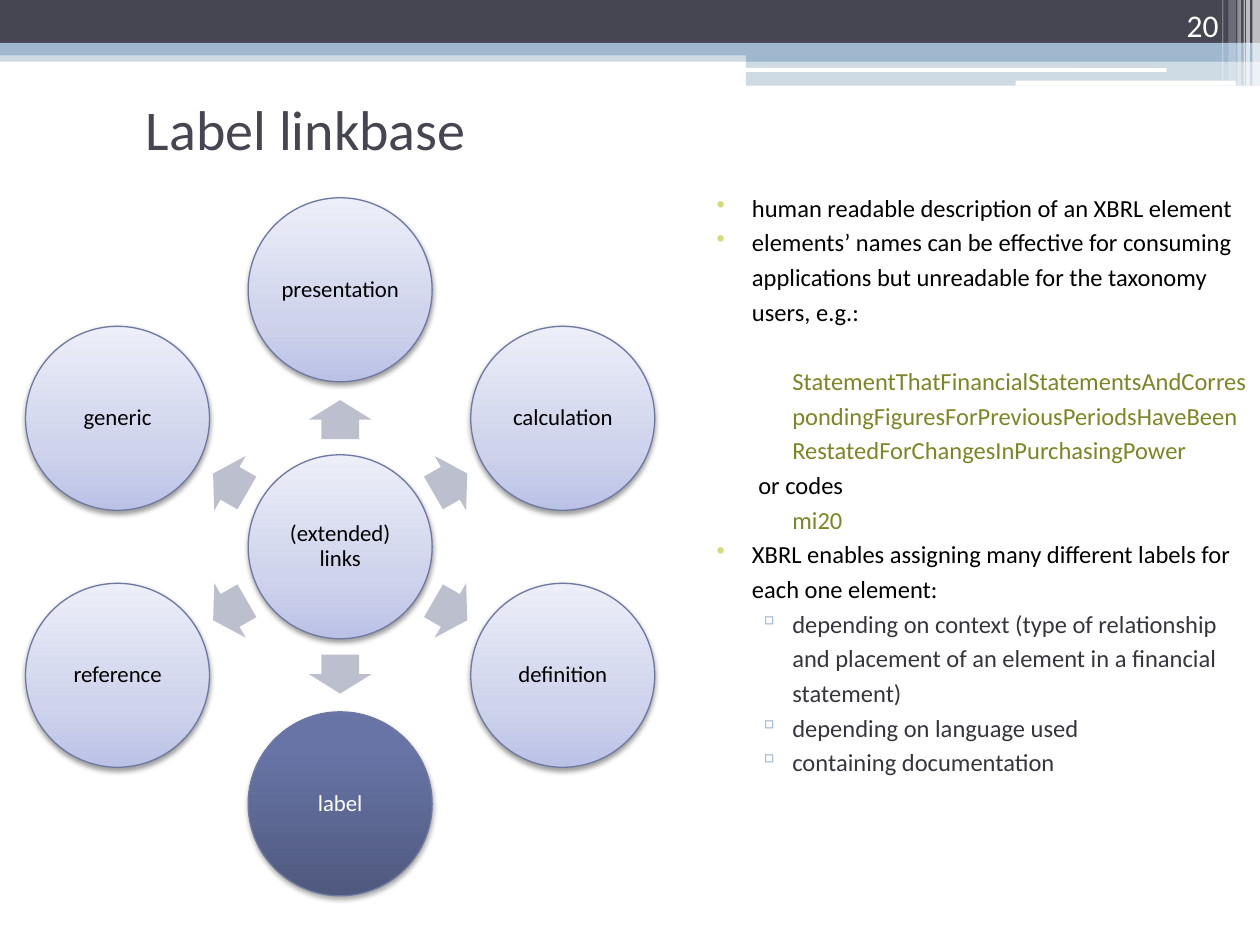
import math

import lxml.etree
import pptx
import pptx.dml.color
import pptx.enum.shapes
import pptx.enum.text
import pptx.oxml.ns
import pptx.util

Inches, Pt = pptx.util.Inches, pptx.util.Pt
RGBColor = pptx.dml.color.RGBColor
MSO_SHAPE = pptx.enum.shapes.MSO_SHAPE
PP_ALIGN = pptx.enum.text.PP_ALIGN
MSO_ANCHOR = pptx.enum.text.MSO_ANCHOR
qn = pptx.oxml.ns.qn

FONT = "Calibri"
BLACK = RGBColor(0x00, 0x00, 0x00)
WHITE = RGBColor(0xFF, 0xFF, 0xFF)
SLATE = RGBColor(0x46, 0x46, 0x53)
SKY = RGBColor(0x9F, 0xB8, 0xCD)
ARROW = RGBColor(0xBC, 0xBF, 0xCE)
OUTLINE = RGBColor(0x6E, 0x79, 0xA1)
LIME = RGBColor(0xD2, 0xDA, 0x7A)
OLIVE = RGBColor(0x7D, 0x85, 0x25)
CHARCOAL = RGBColor(0x35, 0x35, 0x3E)
PALE_STOPS = [(0, RGBColor(0xBB, 0xC2, 0xE6)), (35, RGBColor(0xCF, 0xD4, 0xEC)),
              (100, RGBColor(0xEC, 0xEE, 0xF8))]
DARK_STOPS = [(0, RGBColor(0x50, 0x59, 0x7F)), (80, RGBColor(0x67, 0x74, 0xA5)),
              (100, RGBColor(0x67, 0x74, 0xA7))]

BANDS = [
    (0, 0.4, 10, 0.09, SKY, 50),
    (0, 0, 10, 0.34, SLATE, 100),
    (0, 0.34, 10, 0.1, SKY, 100),
    (5.92, 0.39, 4.08, 0.1, SKY, 100),
    (5.92, 0.48, 4.08, 0.2, SKY, 50),
]
PILLS = [(5.91, 0.54, 3.35, 0.03), (8.06, 0.64, 1.75, 0.04)]
STRIPES = [
    (9.94, 0.06, 0.68, 65), (9.89, 0.03, 0.68, 65), (9.87, 0.01, 0.68, 60),
    (9.82, 0.03, 0.68, 40), (9.75, 0.06, 0.64, 20), (9.7, 0.01, 0.64, 30),
]

CENTER_X, CENTER_Y = 2.7, 4.34
RING_RADIUS, ARROW_RADIUS = 2.04, 1.01
DIAMETER = 1.46
LINKBASES = ["presentation", "calculation", "definition", "label", "reference", "generic"]

TOP, SUB = (0.4, -0.28), (0.72, -0.27)
NOTES = [
    (TOP, "•", BLACK, "human readable description of an XBRL element"),
    (TOP, "•", BLACK, "elements’ names can be effective for consuming applications "
                      "but unreadable for the taxonomy users, e.g.:"),
    (SUB, None, OLIVE, "\tStatementThatFinancialStatementsAndCorrespondingFiguresForPrevious"
                       "PeriodsHaveBeenRestatedForChangesInPurchasingPower"),
    (SUB, None, BLACK, "or codes"),
    (SUB, None, OLIVE, "\tmi20"),
    (TOP, "•", BLACK, "XBRL enables assigning many different labels for each one element:"),
    (SUB, "▫", CHARCOAL, "depending on context (type of relationship and placement of "
                         "an element in a financial statement)"),
    (SUB, "▫", CHARCOAL, "depending on language used"),
    (SUB, "▫", CHARCOAL, "containing documentation"),
]
BULLET_COLORS = {"•": LIME, "▫": SKY}


def add_color(parent, color, alpha=100):
    """Append an RGB colour with an opacity in percent to an XML element."""
    clr = lxml.etree.SubElement(parent, qn("a:srgbClr"), val=str(color))
    if alpha < 100:
        lxml.etree.SubElement(clr, qn("a:alpha"), val=str(alpha * 1000))


def add_solid(s, kind, x, y, w, h, color, alpha=100):
    """Add a borderless preset shape with a plain fill."""
    sp = s.shapes.add_shape(kind, Inches(x), Inches(y), Inches(w), Inches(h))
    sp.shadow.inherit = False
    sp.line.fill.background()
    sp.fill.solid()
    sp.fill.fore_color.rgb = color
    if alpha < 100:
        fill = sp.element.spPr.find(qn("a:solidFill"))
        fill.clear()
        add_color(fill, color, alpha)
    return sp


def write_paragraph(p, text, size, color, align=PP_ALIGN.LEFT):
    """Set a paragraph's text and format all its runs."""
    p.text = text
    p.alignment = align
    for r in p.runs:
        r.font.name = FONT
        r.font.size = Pt(size)
        r.font.color.rgb = color


def add_text(s, x, y, w, h, anchor):
    """Add a wrapping text box and return its text frame."""
    tf = s.shapes.add_textbox(Inches(x), Inches(y), Inches(w), Inches(h)).text_frame
    tf.word_wrap = True
    tf.vertical_anchor = anchor
    return tf


def add_circle(s, x, y, text, stops, color, shadow_alpha, distance):
    """Add a shaded, labelled circle centred on a point."""
    sp = s.shapes.add_shape(MSO_SHAPE.OVAL, Inches(x - DIAMETER / 2), Inches(y - DIAMETER / 2),
                            Inches(DIAMETER), Inches(DIAMETER))
    sp.line.color.rgb = OUTLINE
    sp.line.width = Pt(0.75)
    sp.fill.gradient()
    sp.fill.gradient_angle = 90
    gradient = sp.element.spPr.find(qn("a:gradFill")).find(qn("a:gsLst"))
    gradient.clear()
    for pos, stop in stops:
        add_color(lxml.etree.SubElement(gradient, qn("a:gs"), pos=str(pos * 1000)), stop)
    sp.shadow.inherit = False
    shadow = lxml.etree.SubElement(
        sp.element.spPr.find(qn("a:effectLst")), qn("a:outerShdw"), blurRad=str(Pt(3.1)),
        dist=str(Pt(distance)), dir="5400000", rotWithShape="0")
    add_color(shadow, BLACK, shadow_alpha)
    tf = sp.text_frame
    tf.word_wrap = True
    tf.vertical_anchor = MSO_ANCHOR.MIDDLE
    tf.margin_left = tf.margin_right = tf.margin_top = tf.margin_bottom = Inches(0.02)
    p = tf.paragraphs[0]
    write_paragraph(p, text, 13, color, PP_ALIGN.CENTER)
    p.line_spacing = 0.9


def add_arrow(s, x, y, rotation):
    """Add a block arrow centred on a point."""
    w, h = 0.31, 0.5
    sp = add_solid(s, MSO_SHAPE.RIGHT_ARROW, x - w / 2, y - h / 2, w, h, ARROW)
    sp.adjustments[0] = 0.6
    sp.adjustments[1] = 0.5
    sp.rotation = rotation


def add_header(s):
    """Add the bands, pills and stripes along the top edge."""
    for x, y, w, h, color, alpha in BANDS:
        add_solid(s, MSO_SHAPE.RECTANGLE, x, y, w, h, color, alpha)
    for pill in PILLS:
        add_solid(s, MSO_SHAPE.ROUNDED_RECTANGLE, *pill, WHITE)
    for x, w, h, alpha in STRIPES:
        add_solid(s, MSO_SHAPE.RECTANGLE, x, 0, w, h, WHITE, alpha)


def add_wheel(s):
    """Add the hub circle with its ring of linkbases."""
    pale = (PALE_STOPS, BLACK, 38, 1.6)
    dark = (DARK_STOPS, WHITE, 35, 1.8)
    add_circle(s, CENTER_X, CENTER_Y, "(extended)\nlinks", *pale)
    for i, name in enumerate(LINKBASES):
        angle = 360 / len(LINKBASES) * i - 90
        dx, dy = math.cos(math.radians(angle)), math.sin(math.radians(angle))
        add_arrow(s, CENTER_X + ARROW_RADIUS * dx, CENTER_Y + ARROW_RADIUS * dy, angle % 360)
        add_circle(s, CENTER_X + RING_RADIUS * dx, CENTER_Y + RING_RADIUS * dy, name,
                   *(dark if name == "label" else pale))


def add_notes(s):
    """Add the bulleted explanation on the right."""
    tf = add_text(s, 5.47, 1.48, 4.53, 5.63, MSO_ANCHOR.TOP)
    for i, ((margin, indent), bullet, color, text) in enumerate(NOTES):
        p = tf.add_paragraph() if i else tf.paragraphs[0]
        write_paragraph(p, text, 14, color)
        p.level = 1 if margin == SUB[0] else 0
        if i:
            p.line_spacing = 1.18
        else:
            p.space_before = Pt(3)
        pPr = p.runs[0].font._element.getparent().getparent().find(qn("a:pPr"))
        pPr.set("marL", str(Inches(margin)))
        pPr.set("indent", str(Inches(indent)))
        if bullet:
            add_color(lxml.etree.SubElement(pPr, qn("a:buClr")), BULLET_COLORS[bullet])
            lxml.etree.SubElement(pPr, qn("a:buChar"), char=bullet)


def main():
    """Build and save the slide."""
    prs = pptx.Presentation()
    prs.slide_width, prs.slide_height = Inches(10), Inches(7.5)
    s = prs.slides.add_slide(prs.slide_layouts[6])
    add_header(s)
    tf = add_text(s, 1.06, 0.47, 8.62, 1.09, MSO_ANCHOR.MIDDLE)
    write_paragraph(tf.paragraphs[0], "Label linkbase", 32, SLATE)
    add_wheel(s)
    tf = add_text(s, 8.94, 0, 0.83, 0.4, MSO_ANCHOR.BOTTOM)
    write_paragraph(tf.paragraphs[0], "20", 18, WHITE, PP_ALIGN.RIGHT)
    add_notes(s)
    prs.save("out.pptx")


if __name__ == "__main__":
    main()
